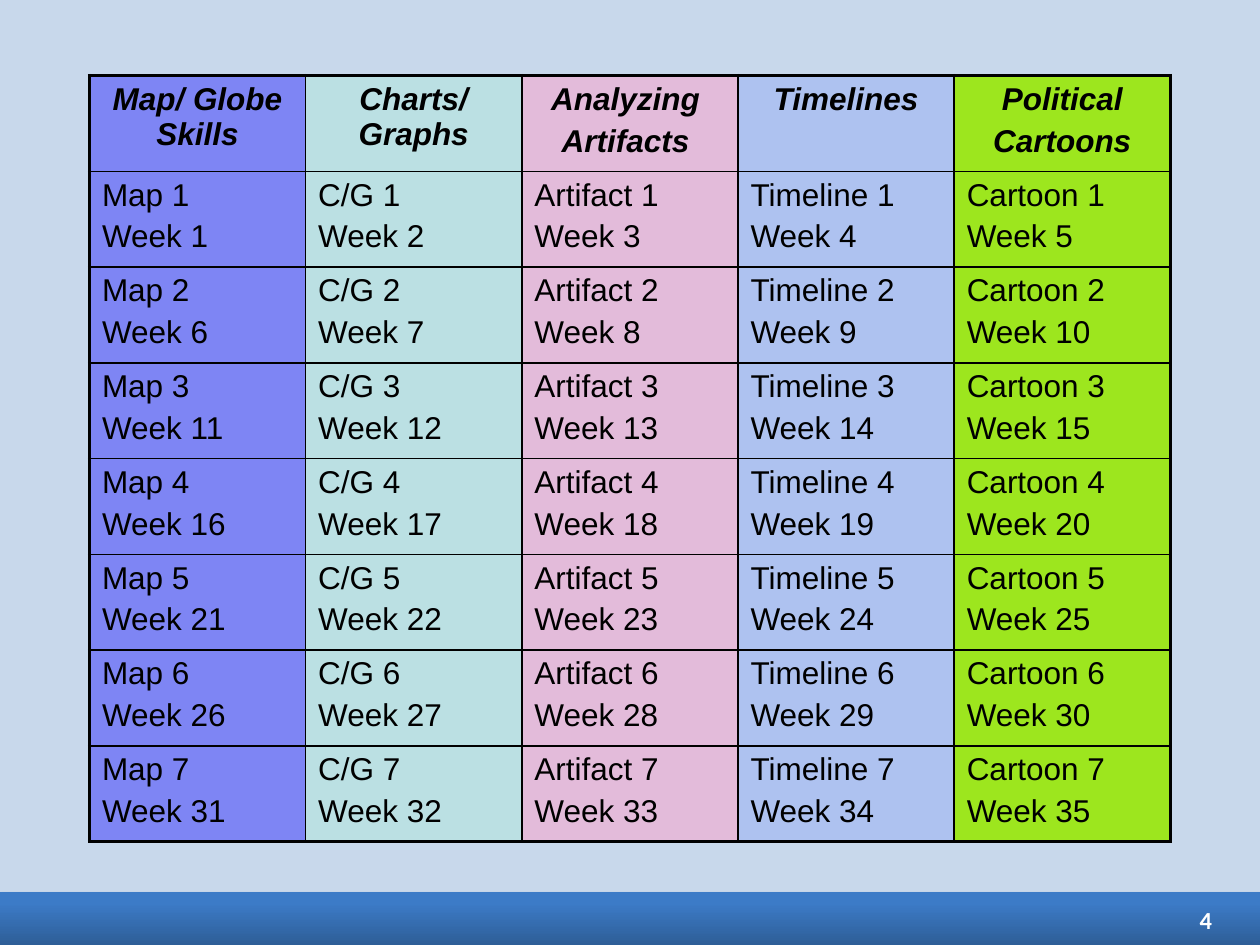
from copy import deepcopy

from lxml.etree import SubElement
from pptx import Presentation
from pptx.dml.color import RGBColor
from pptx.enum.shapes import MSO_SHAPE
from pptx.enum.text import MSO_ANCHOR, MSO_AUTO_SIZE, PP_ALIGN
from pptx.oxml.ns import qn
from pptx.util import Pt


def color(value):
    return RGBColor.from_string(value)


def write(paragraph, text, paragraph_format, font_format, font_color):
    run = paragraph.add_run()
    run.text = text
    for name, value in paragraph_format.items():
        setattr(paragraph, name, value)
    for name, value in font_format.items():
        setattr(run.font, name, value)
    run.font.color.rgb = color(font_color)


presentation = Presentation()
presentation.slide_width = Pt(720)
presentation.slide_height = Pt(540)
slide = presentation.slides.add_slide(presentation.slide_layouts[6])
slide.background.fill.solid()
slide.background.fill.fore_color.rgb = color("C8D8EB")

footer = slide.shapes.add_shape(MSO_SHAPE.RECTANGLE, Pt(0), Pt(510), Pt(720), Pt(30))
footer.line.fill.background()
footer.fill.gradient()
footer.fill.gradient_angle = 90
stop_list = footer._element.spPr.find(".//" + qn("a:gsLst"))
stop_list.append(deepcopy(stop_list[-1]))
footer_stops = [(0, "2E5E97"), (0.8, "3C7BC7"), (1, "3A7CCA")]
for stop, (position, shade) in zip(footer.fill.gradient_stops, footer_stops):
    stop.position = position
    stop.color.rgb = color(shade)
footer.shadow.inherit = False
effects = footer._element.spPr.find(qn("a:effectLst"))
footer_shadow = SubElement(effects, qn("a:outerShdw"), blurRad=str(Pt(3)),
                           dist=str(Pt(1.8)), dir="5400000", rotWithShape="0")
shadow_color = SubElement(footer_shadow, qn("a:srgbClr"), val="000000")
SubElement(shadow_color, qn("a:alpha"), val="35000")

page_number = slide.shapes.add_textbox(Pt(679.7), Pt(514), Pt(16.6), Pt(23)).text_frame
number_frame = {
    "word_wrap": False, "auto_size": MSO_AUTO_SIZE.SHAPE_TO_FIT_TEXT,
    "vertical_anchor": MSO_ANCHOR.MIDDLE,
    "margin_left": Pt(3.6), "margin_right": Pt(3.6),
    "margin_top": Pt(3.6), "margin_bottom": Pt(3.6),
}
for name, value in number_frame.items():
    setattr(page_number, name, value)
write(page_number.paragraphs[0], "4", {"alignment": PP_ALIGN.RIGHT},
      {"name": "Calibri", "size": Pt(14), "bold": True}, "FFFFFF")

skills = [
    (["Map/ Globe Skills"], "Map", "7E85F4"),
    (["Charts/ Graphs"], "C/G", "BBE0E3"),
    (["Analyzing ", "Artifacts "], "Artifact", "E3BBDA"),
    (["Timelines"], "Timeline", "AEC2F0"),
    (["Political", "Cartoons"], "Cartoon", "9DE61E"),
]
rounds = 7
row_count, column_count = rounds + 1, len(skills)
schedule = slide.shapes.add_table(row_count, column_count, Pt(51.1), Pt(43.2),
                                  Pt(617.75), Pt(437.76)).table
schedule.first_row = False
schedule.horz_banding = False
for column in schedule.columns:
    column.width = Pt(123.55)
for row in schedule.rows:
    row.height = Pt(54.72)

cell_margins = {"margin_left": Pt(7.2), "margin_right": Pt(7.2),
                "margin_top": Pt(3.6), "margin_bottom": Pt(3.6)}
for column_index, (heading, activity, shade) in enumerate(skills):
    for row_index in range(row_count):
        is_heading = row_index == 0
        week = (row_index - 1) * column_count + column_index + 1
        lines = heading if is_heading else [f"{activity} {row_index}", f"Week {week}"]
        cell = schedule.cell(row_index, column_index)
        for name, value in cell_margins.items():
            setattr(cell, name, value)

        outer_edges = {
            "a:lnL": column_index == 0,
            "a:lnR": column_index == column_count - 1,
            "a:lnT": is_heading,
            "a:lnB": row_index == rounds,
        }
        for edge, is_outer in outer_edges.items():
            border = SubElement(cell._tc.get_or_add_tcPr(), qn(edge),
                                w=str(Pt(2.25 if is_outer else 1)))
            border_fill = SubElement(border, qn("a:solidFill"))
            SubElement(border_fill, qn("a:srgbClr"), val="000000")
        cell.fill.solid()
        cell.fill.fore_color.rgb = color(shade)

        for line_index, line in enumerate(lines):
            frame = cell.text_frame
            paragraph = frame.add_paragraph() if line_index else frame.paragraphs[0]
            write(paragraph, line,
                  {"alignment": PP_ALIGN.CENTER if is_heading else PP_ALIGN.LEFT,
                   "space_before": Pt(3.6)},
                  {"name": "Arial", "size": Pt(18), "bold": is_heading, "italic": is_heading},
                  "000000")

presentation.save("out.pptx")
